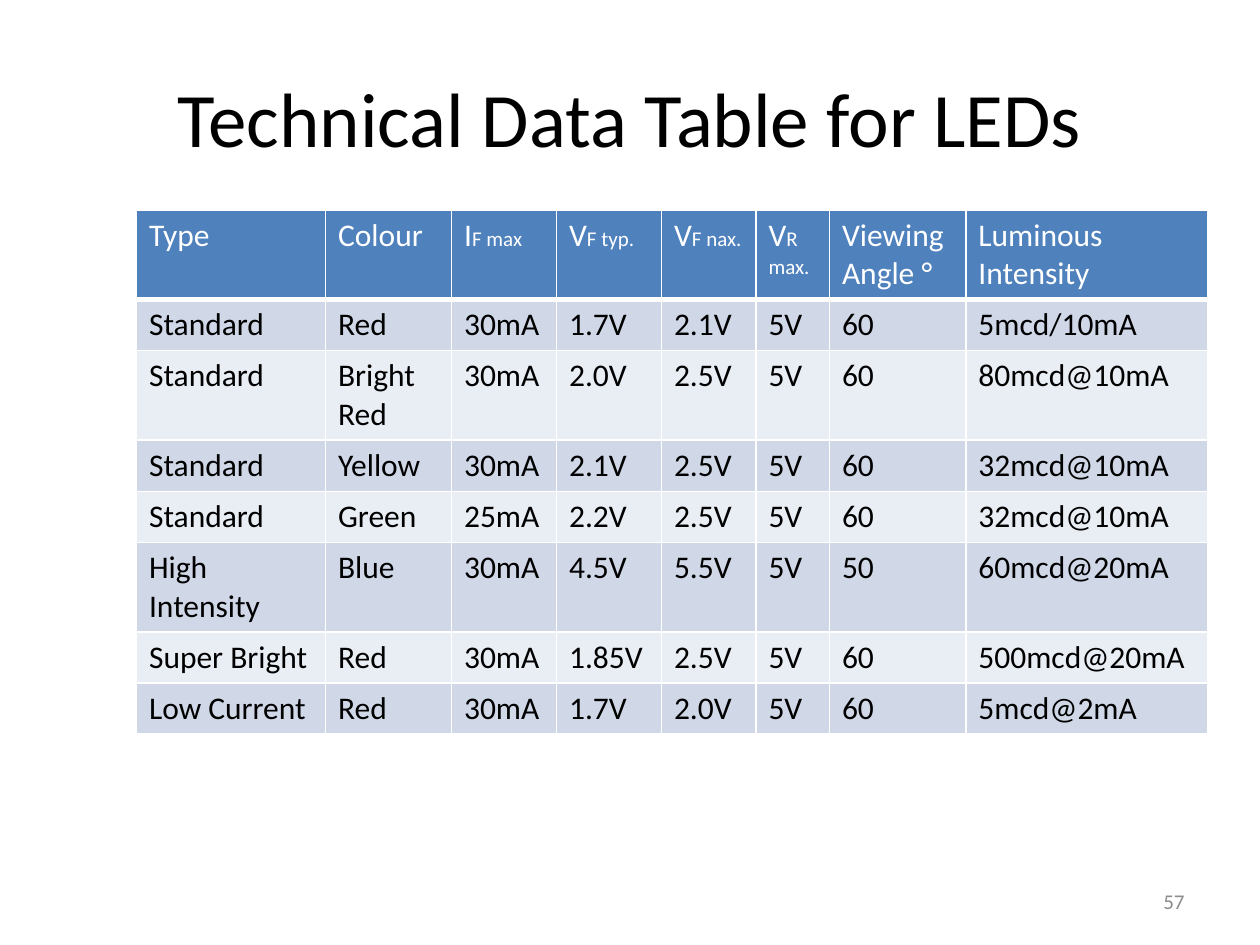
from dataclasses import dataclass

from lxml import etree
from pptx import Presentation
from pptx.dml.color import RGBColor
from pptx.enum import text
from pptx.oxml import ns
from pptx.util import Pt

FONT = "Calibri"
WHITE, BLACK, GREY = "FFFFFF", "000000", "8C8C8C"
HEADER_FILL, ODD_FILL, EVEN_FILL = "4F81BD", "D0D8E8", "E9EDF4"
TALL, SHORT = 50.4, 29.2


@dataclass(frozen=True)
class Column:
    width: float
    heading: str
    subscript: str = ""


@dataclass(frozen=True)
class Led:
    kind: str
    colour: str
    current: str
    typical: str
    maximum: str
    angle: str
    intensity: str
    height: float = SHORT

    def values(self) -> list[str]:
        return [self.kind, self.colour, self.current, self.typical,
                self.maximum, "5V", self.angle, self.intensity]


COLUMNS = [
    Column(108, "Type"),
    Column(72, "Colour"),
    Column(60, "I", "F max"),
    Column(60, "V", "F typ."),
    Column(54, "V", "F nax."),
    Column(42, "V", "R max."),
    Column(78, "Viewing Angle °"),
    Column(138, "Luminous Intensity"),
]
LEDS = [
    Led("Standard", "Red", "30mA", "1.7V", "2.1V", "60", "5mcd/10mA"),
    Led("Standard", "Bright Red", "30mA", "2.0V", "2.5V", "60", "80mcd@10mA", TALL),
    Led("Standard", "Yellow", "30mA", "2.1V", "2.5V", "60", "32mcd@10mA"),
    Led("Standard", "Green", "25mA", "2.2V", "2.5V", "60", "32mcd@10mA"),
    Led("High Intensity", "Blue", "30mA", "4.5V", "5.5V", "50", "60mcd@20mA", TALL),
    Led("Super Bright", "Red", "30mA", "1.85V", "2.5V", "60", "500mcd@20mA"),
    Led("Low Current", "Red", "30mA", "1.7V", "2.0V", "60", "5mcd@2mA"),
]


def rgb(value: str) -> RGBColor:
    return RGBColor.from_string(value)


def add_span(para, words: str, size: float, colour: str) -> None:
    span = para.add_run()
    span.text = words
    span.font.name = FONT
    span.font.size = Pt(size)
    span.font.bold = False
    span.font.color.rgb = rgb(colour)


def add_borders(cell, bottom: float) -> None:
    properties = cell._tc.get_or_add_tcPr()
    for side, width in (("L", 1), ("R", 1), ("T", 1), ("B", bottom)):
        line = etree.SubElement(properties, ns.qn(f"a:ln{side}"), w=str(Pt(width)))
        fill = etree.SubElement(line, ns.qn("a:solidFill"))
        etree.SubElement(fill, ns.qn("a:srgbClr"), val=WHITE)


def format_cell(cell, fill: str, bottom: float = 1) -> None:
    add_borders(cell, bottom)
    cell.fill.solid()
    cell.fill.fore_color.rgb = rgb(fill)


def add_title(page) -> None:
    title = page.shapes.title
    title.left, title.top, title.width, title.height = Pt(36), Pt(21.6), Pt(648), Pt(90)
    title.text_frame.vertical_anchor = text.MSO_ANCHOR.MIDDLE
    para = title.text_frame.paragraphs[0]
    para.alignment = text.PP_ALIGN.CENTER
    add_span(para, "Technical Data Table for LEDs", 44, BLACK)


def add_led_table(page) -> None:
    heights = [TALL] + [led.height for led in LEDS]
    width = sum(column.width for column in COLUMNS)
    frame = page.shapes.add_table(len(heights), len(COLUMNS), Pt(78), Pt(120),
                                  Pt(width), Pt(sum(heights)))
    table = frame.table
    for row, height in zip(table.rows, heights):
        row.height = Pt(height)
    for index, column in enumerate(COLUMNS):
        table.columns[index].width = Pt(column.width)
        cell = table.cell(0, index)
        format_cell(cell, HEADER_FILL, bottom=3)
        para = cell.text_frame.paragraphs[0]
        add_span(para, column.heading, 18, WHITE)
        if column.subscript:
            add_span(para, column.subscript, 12, WHITE)
    for number, led in enumerate(LEDS, start=1):
        for index, value in enumerate(led.values()):
            cell = table.cell(number, index)
            format_cell(cell, ODD_FILL if number % 2 else EVEN_FILL)
            add_span(cell.text_frame.paragraphs[0], value, 18, BLACK)


def add_page_number(page) -> None:
    box = page.shapes.add_textbox(Pt(516), Pt(500.5), Pt(168), Pt(28.75))
    box.text_frame.word_wrap = True
    box.text_frame.vertical_anchor = text.MSO_ANCHOR.MIDDLE
    para = box.text_frame.paragraphs[0]
    para.alignment = text.PP_ALIGN.RIGHT
    add_span(para, "57", 12, GREY)


def main() -> None:
    deck = Presentation()
    deck.slide_width, deck.slide_height = Pt(720), Pt(540)
    page = deck.slides.add_slide(deck.slide_layouts[5])
    add_title(page)
    add_led_table(page)
    add_page_number(page)
    deck.save("out.pptx")


if __name__ == "__main__":
    main()
